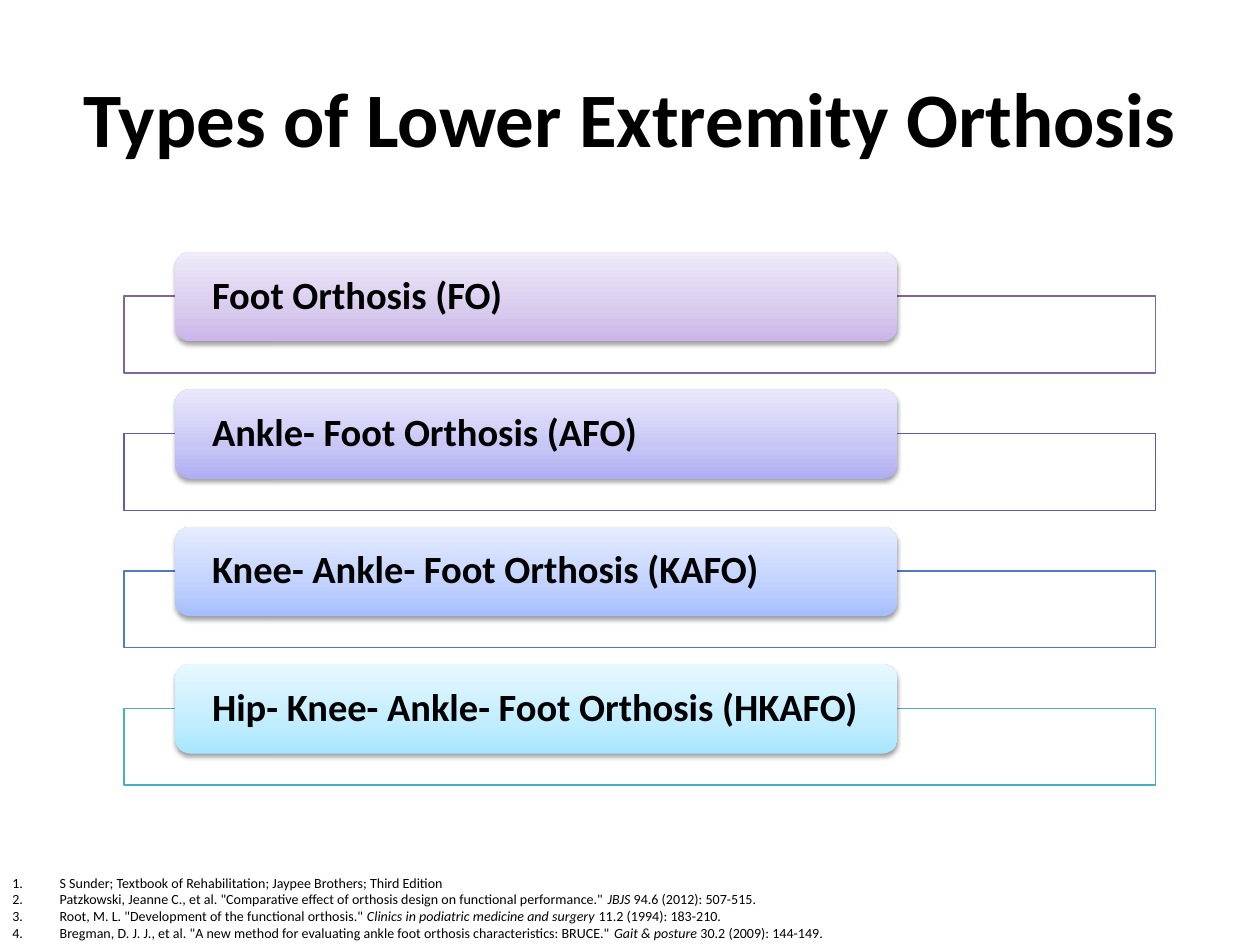
from dataclasses import dataclass

import lxml.etree
import pptx
import pptx.dml.color
import pptx.enum.shapes
import pptx.enum.text
import pptx.oxml
import pptx.oxml.ns
import pptx.util

Pt = pptx.util.Pt
Shape = pptx.enum.shapes.MSO_SHAPE
Anchor = pptx.enum.text.MSO_ANCHOR
Align = pptx.enum.text.PP_ALIGN
qn = pptx.oxml.ns.qn


@dataclass(frozen=True)
class Theme:
    font: str = "Calibri"
    ink: str = "000000"
    paper: str = "FFFFFF"
    title_size: float = 44
    label_size: float = 22
    reference_size: float = 8


THEME = Theme()

# Label, frame line, gradient colours from bottom to top
ORTHOSES = [
    ("Foot Orthosis (FO)", "8064A2", ("C9B5E8", "D8CBEE", "F0EAF9")),
    ("Ankle- Foot Orthosis (AFO)", "5F5BAE", ("AFADF3", "C7C6F5", "E9E8FC")),
    ("Knee- Ankle- Foot Orthosis (KAFO)", "537ABA", ("A5BEFD", "C0D1FD", "E6EDFF")),
    ("Hip- Knee- Ankle- Foot Orthosis (HKAFO)", "4BACC6", ("A7E6FF", "C1EDFF", "E7F8FF")),
]
GRADIENT_STOPS = (0, 35, 100)
FIRST_TOP, ROW_PITCH = 144, 78.5

# Text before the journal, journal in italics, text after it
REFERENCES = [
    ("S Sunder; Textbook of Rehabilitation; Jaypee Brothers; Third Edition",),
    ('Patzkowski, Jeanne C., et al. "Comparative effect of orthosis design on functional performance." ',
     "JBJS", " 94.6 (2012): 507-515."),
    ('Root, M. L. "Development of the functional orthosis." ',
     "Clinics in podiatric medicine and surgery", " 11.2 (1994): 183-210."),
    ('Bregman, D. J. J., et al. "A new method for evaluating ankle foot orthosis characteristics: BRUCE." ',
     "Gait & posture", " 30.2 (2009): 144-149."),
]


def rgb(value):
    return pptx.dml.color.RGBColor.from_string(value)


def style_font(font, size, bold=False):
    font.name = THEME.font
    font.size = Pt(size)
    font.bold = bold
    font.color.rgb = rgb(THEME.ink)


def add_color(parent, value, alpha=None):
    color = lxml.etree.SubElement(parent, qn("a:srgbClr"), val=value)
    if alpha is not None:
        lxml.etree.SubElement(color, qn("a:alpha"), val=str(alpha * 1000))


def set_gradient(shape, colors):
    """Fill from bottom to top with the shared gradient stops."""
    gradient = pptx.oxml.parse_xml(
        f'<a:gradFill {pptx.oxml.ns.nsdecls("a")} rotWithShape="1">'
        '<a:gsLst/><a:lin ang="16200000" scaled="0"/></a:gradFill>')
    for position, value in zip(GRADIENT_STOPS, colors):
        stop = lxml.etree.SubElement(gradient[0], qn("a:gs"), pos=str(position * 1000))
        add_color(stop, value)
    shape._element.spPr.find(qn("a:prstGeom")).addnext(gradient)


def set_shadow(shape):
    effects = shape._element.spPr.find(qn("a:effectLst"))
    shadow = lxml.etree.SubElement(
        effects, qn("a:outerShdw"), blurRad=str(Pt(3.1)), dist=str(Pt(1.6)),
        dir="5400000", rotWithShape="0")
    add_color(shadow, THEME.ink, 38)


def add_plain_shape(page, kind, left, top, width, height):
    shape = page.shapes.add_shape(kind, Pt(left), Pt(top), Pt(width), Pt(height))
    shape.shadow.inherit = False
    return shape


def add_frame(page, top, line_color):
    frame = add_plain_shape(page, Shape.RECTANGLE, 70.8, top, 589.4, 43.9)
    frame.fill.solid()
    frame.fill.fore_color.rgb = rgb(THEME.paper)
    color = frame._element.spPr.find(qn("a:solidFill"))[0]
    lxml.etree.SubElement(color, qn("a:alpha"), val="90000")
    frame.line.color.rgb = rgb(line_color)
    frame.line.width = Pt(0.75)


def add_label(page, top, text, colors):
    label = add_plain_shape(page, Shape.ROUNDED_RECTANGLE, 100.2, top, 412.6, 51.1)
    label.line.fill.background()
    set_gradient(label, colors)
    set_shadow(label)
    text_frame = label.text_frame
    text_frame.text = text
    text_frame.word_wrap = True
    text_frame.vertical_anchor = Anchor.MIDDLE
    text_frame.margin_left = text_frame.margin_right = Pt(18.5)
    text_frame.margin_top = text_frame.margin_bottom = 0
    para = text_frame.paragraphs[0]
    para.alignment = Align.LEFT
    para.line_spacing = 0.9
    style_font(para.runs[0].font, THEME.label_size, bold=True)


def add_title(page, text):
    box = page.shapes.add_textbox(Pt(36), Pt(21.6), Pt(648), Pt(90))
    box.text_frame.text = text
    box.text_frame.word_wrap = True
    box.text_frame.vertical_anchor = Anchor.MIDDLE
    para = box.text_frame.paragraphs[0]
    para.alignment = Align.CENTER
    style_font(para.runs[0].font, THEME.title_size, bold=True)


def set_numbering(para):
    properties = para._p.get_or_add_pPr()
    properties.set("marL", str(Pt(27)))
    properties.set("indent", str(Pt(-27)))
    lxml.etree.SubElement(properties, qn("a:buFont"), typeface=THEME.font)
    lxml.etree.SubElement(properties, qn("a:buAutoNum"), type="arabicPeriod")


def add_references(page, references):
    box = page.shapes.add_textbox(0, Pt(496), Pt(720), Pt(46))
    text_frame = box.text_frame
    text_frame.word_wrap = True
    for index, parts in enumerate(references):
        para = text_frame.add_paragraph() if index else text_frame.paragraphs[0]
        set_numbering(para)
        for position, part in enumerate(parts):
            span = para.add_run()
            span.text = part
            style_font(span.font, THEME.reference_size)
            span.font.italic = position == 1


def main():
    deck = pptx.Presentation()
    deck.slide_width, deck.slide_height = Pt(720), Pt(540)
    page = deck.slides.add_slide(deck.slide_layouts[6])
    add_title(page, "Types of Lower Extremity Orthosis")
    for row, (text, line_color, colors) in enumerate(ORTHOSES):
        top = FIRST_TOP + row * ROW_PITCH
        add_frame(page, top + 25.2, line_color)
        add_label(page, top, text, colors)
    add_references(page, REFERENCES)
    deck.save("out.pptx")


if __name__ == "__main__":
    main()
